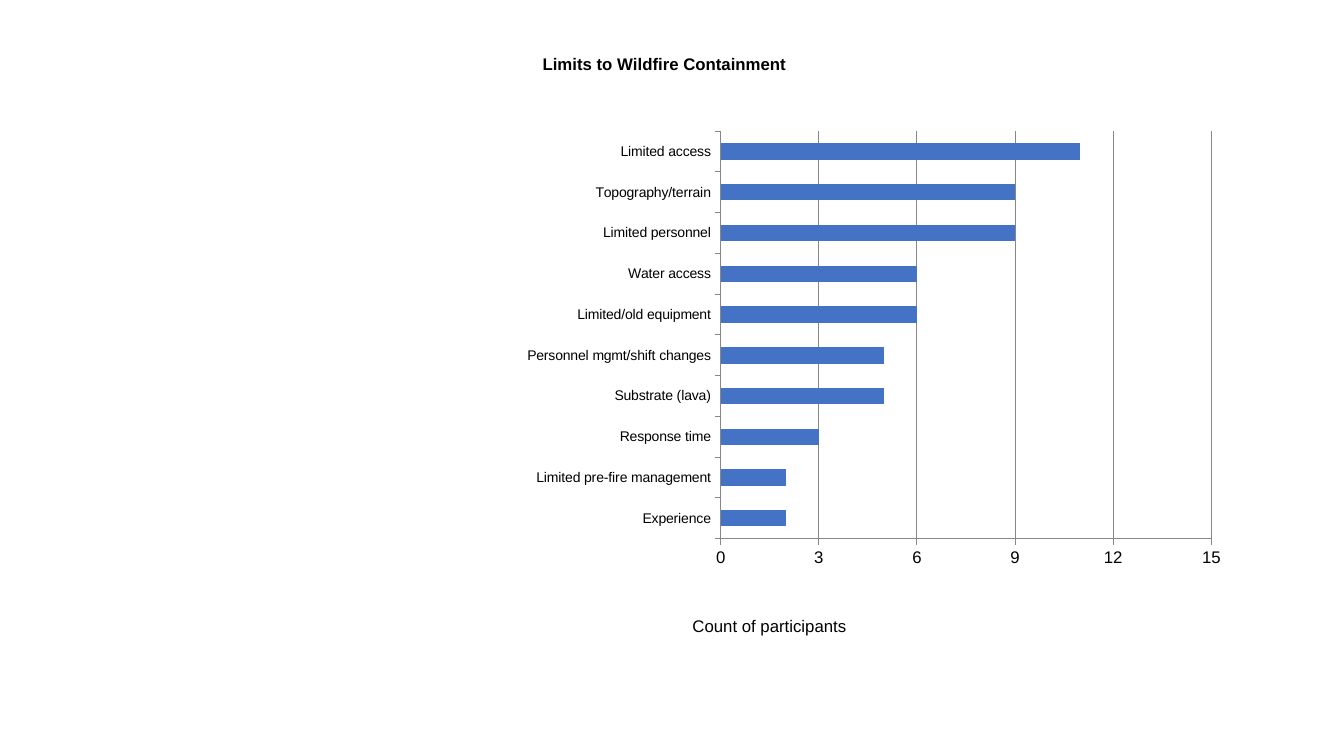
"""Build a slide with a bar chart of the limits to wildfire containment."""
from lxml import etree
from pptx import Presentation
from pptx import util as u
from pptx.chart.data import CategoryChartData
from pptx.dml.color import RGBColor
from pptx.enum import chart as kinds
from pptx.oxml.ns import qn


def color(value):
    return RGBColor.from_string(value)


def place(parent, **sizes):
    for old in parent.findall(qn("c:layout")):
        parent.remove(old)
    layout = etree.Element(qn("c:layout"))
    manual = etree.SubElement(layout, qn("c:manualLayout"))
    for name, value in sizes.items():
        etree.SubElement(manual, qn("c:" + name)).set("val", str(value))
    parent.insert(1 if parent.find(qn("c:tx")) is not None else 0, layout)


limits = {
    "Experience": 2,
    "Limited pre-fire management": 2,
    "Response time": 3,
    "Substrate (lava)": 5,
    "Personnel mgmt/shift changes": 5,
    "Limited/old equipment": 6,
    "Water access": 6,
    "Limited personnel": 9,
    "Topography/terrain": 9,
    "Limited access": 11,
}

deck = Presentation()
deck.slide_width, deck.slide_height = u.Pt(960), u.Pt(540)
page = deck.slides.add_slide(deck.slide_layouts[6])

data = CategoryChartData(number_format="0")
data.categories = list(limits)
data.add_series("Series 1", list(limits.values()))
chart = page.shapes.add_chart(
    kinds.XL_CHART_TYPE.BAR_CLUSTERED,
    u.Pt(-13.7), u.Pt(21.6), u.Pt(973.4), u.Pt(478), data,
).chart
chart.has_legend = False
chart.font.name = "Arial"
chart.font.size = u.Pt(12)
chart.font.color.rgb = color("000000")

plot = chart.plots[0]
plot.gap_width = 150
plot.vary_by_categories = False
bars = plot.series[0].format.fill
bars.solid()
bars.fore_color.rgb = color("4472C4")

category_axis, value_axis = chart.category_axis, chart.value_axis
for axis, size in ((category_axis, 10), (value_axis, 12)):
    axis.major_tick_mark = kinds.XL_TICK_MARK.OUTSIDE
    axis.minor_tick_mark = kinds.XL_TICK_MARK.NONE
    axis.tick_labels.font.size = u.Pt(size)
    axis.format.line.color.rgb = color("878787")
    axis.format.line.width = u.Pt(0.75)
category_axis.has_major_gridlines = False
value_axis.minimum_scale, value_axis.maximum_scale = 0, 15
value_axis.major_unit = 3
value_axis.tick_labels.number_format = "0"
value_axis.tick_labels.number_format_is_linked = False
value_axis.has_major_gridlines = True
value_axis.major_gridlines.format.line.color.rgb = color("878787")
value_axis.major_gridlines.format.line.width = u.Pt(0.75)

for title, words, bold, left, top in (
    (chart.chart_title, "Limits to Wildfire Containment", True, 0.41, 0.03),
    (value_axis.axis_title, "Count of participants", False, 0.52, 0.87),
):
    title.text_frame.text = words
    font = title.text_frame.paragraphs[0].runs[0].font
    font.name = "Arial"
    font.size = u.Pt(12)
    font.bold = bold
    font.color.rgb = color("000000")
    place(title._element, xMode="edge", yMode="edge", x=left, y=top)

place(
    chart._chartSpace.chart.plotArea,
    layoutTarget="inner", xMode="edge", yMode="edge",
    x=0.543, y=0.151, w=0.36, h=0.609,
)

deck.save("out.pptx")
